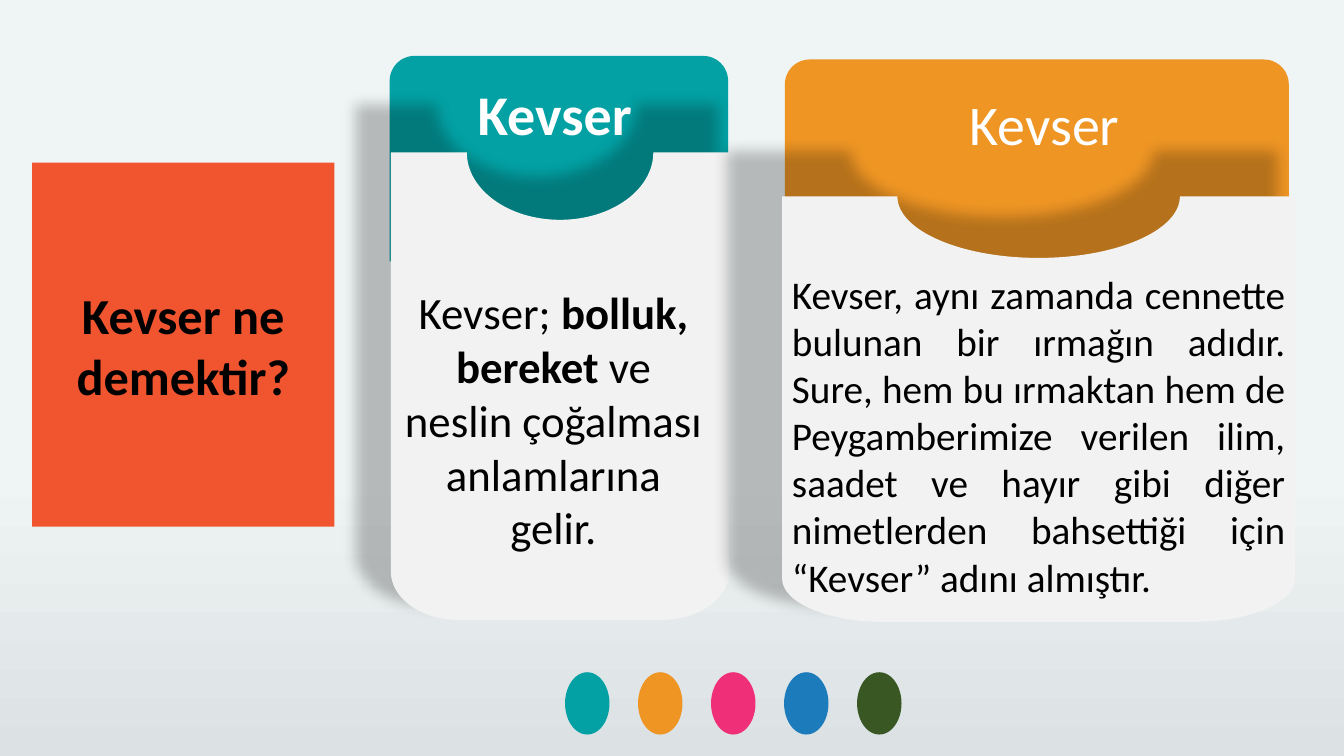
from dataclasses import dataclass
from math import atan2, degrees, hypot

from lxml.etree import SubElement
from pptx import Presentation
from pptx.dml.color import RGBColor
from pptx.enum.shapes import MSO_SHAPE as Shape
from pptx.enum.text import MSO_ANCHOR as Anchor, MSO_AUTO_SIZE as AutoSize, PP_ALIGN as Align
from pptx.oxml.ns import qn
from pptx.util import Cm, Pt


@dataclass(frozen=True)
class Theme:
    font: str = "Calibri"
    sky: str = "EFF4F5"
    mist: str = "DCE1E4"
    red: str = "F05530"
    teal: str = "03A1A4"
    orange: str = "EE9524"
    pink: str = "EF3078"
    blue: str = "1C7CBB"
    green: str = "385723"
    panel: str = "F2F2F2"
    ink: str = "000000"
    white: str = "FFFFFF"
    heading: int = 40
    question: int = 36
    meaning: int = 32
    detail: int = 28


THEME = Theme()
ROUNDNESS = 0.5523  # control-point reach of a quarter ellipse


def color(code):
    return RGBColor.from_string(code)


def paint(shape, fill):
    shape.fill.solid()
    shape.fill.fore_color.rgb = color(fill)
    shape.line.fill.background()


def write(box, runs, size, ink=THEME.ink, align=Align.CENTER, anchor=Anchor.TOP):
    """Fill a box with one paragraph; runs are (text, bold) pairs."""
    frame = box.text_frame
    frame.word_wrap = True
    frame.auto_size = AutoSize.NONE
    frame.vertical_anchor = anchor
    para = frame.paragraphs[0]
    para.alignment = align
    for text, bold in runs:
        span = para.add_run()
        span.text = text
        span.font.name = THEME.font
        span.font.size = Pt(size)
        span.font.bold = bold
        span.font.color.rgb = color(ink)


def add_text(page, place, runs, size, **style):
    box = page.shapes.add_textbox(*map(Cm, place))
    write(box, runs, size, **style)


def add_preset(page, kind, place, fill):
    shape = page.shapes.add_shape(kind, *map(Cm, place))
    shape.shadow.inherit = False
    paint(shape, fill)
    return shape


def add_backdrop(page):
    """A gradient rectangle behind everything else."""
    backdrop = add_preset(page, Shape.RECTANGLE, (0, 0, 33.87, 19.05), THEME.sky)
    backdrop.fill.gradient()
    backdrop.fill.gradient_angle = 270
    stops = zip(backdrop.fill.gradient_stops, (0.62, 1), (THEME.sky, THEME.mist))
    for stop, position, code in stops:
        stop.position = position
        stop.color.rgb = color(code)
    page.shapes._spTree.insert(2, backdrop._element)


def add_header(page, place, fill):
    header = add_preset(page, Shape.ROUND_2_SAME_RECTANGLE, place, fill)
    header.adjustments[0] = 0.121
    header.adjustments[1] = 0


def cast_shadow(shape, shift):
    effects = SubElement(shape._element.spPr, qn("a:effectLst"))
    shadow = SubElement(effects, qn("a:outerShdw"), {
        "blurRad": str(Pt(10)),
        "dist": str(Cm(hypot(*shift))),
        "dir": str(round(degrees(atan2(shift[1], shift[0])) % 360 * 60000)),
        "sx": "107000",
        "sy": "107000",
        "algn": "ctr",
        "rotWithShape": "0",
    })
    tint = SubElement(shadow, qn("a:srgbClr"), val=THEME.ink)
    SubElement(tint, qn("a:alpha"), val="23000")


def bend(shape, turns):
    """Turn numbered straight segments into quarter ellipses.

    A turn is True where the curve sets out vertically.
    """
    lines = list(shape._element.spPr.iter(qn("a:lnTo")))
    ends = [(int(line[0].get("x")), int(line[0].get("y"))) for line in lines]
    for index, vertical in turns.items():
        start, end = ends[index - 1], ends[index]
        corner = (start[0], end[1]) if vertical else (end[0], start[1])
        controls = [[round(p + ROUNDNESS * (c - p)) for p, c in zip(point, corner)]
                    for point in (start, end)]
        line = lines[index]
        line.tag = qn("a:cubicBezTo")
        line.remove(line[0])
        for x, y in (*controls, end):
            SubElement(line, qn("a:pt"), x=str(x), y=str(y))


def add_panel(page, place, notch, corner, shift):
    """A panel with a half-ellipse notch on top and rounded lower corners."""
    left, top, width, height = place
    right, bottom, middle = left + width, top + height, left + width / 2
    low = bottom - corner[1]
    points = [
        (left, top),
        (middle - notch[0], top), (middle, top + notch[1]), (middle + notch[0], top),
        (right, top), (right, low), (right - corner[0], bottom),
        (left + corner[0], bottom), (left, low),
    ]
    start, *others = [(Cm(x), Cm(y)) for x, y in points]
    builder = page.shapes.build_freeform(*start)
    builder.add_line_segments(others, close=True)
    panel = builder.convert_to_shape()
    bend(panel, {1: True, 2: False, 5: True, 7: False})
    paint(panel, THEME.panel)
    cast_shadow(panel, shift)


def add_question(page):
    title = page.shapes.title
    title.left, title.top, title.width, title.height = map(Cm, (0.81, 4.1, 7.62, 9.17))
    paint(title, THEME.red)
    write(title, [("Kevser ne demektir?", True)], THEME.question, anchor=Anchor.MIDDLE)


def add_dots(page):
    fills = (THEME.teal, THEME.orange, THEME.pink, THEME.blue, THEME.green)
    for index, fill in enumerate(fills):
        add_preset(page, Shape.OVAL, (14.24 + 1.84 * index, 16.94, 1.12, 1.57), fill)


def main():
    deck = Presentation()
    deck.slide_width, deck.slide_height = Cm(33.87), Cm(19.05)
    page = deck.slides.add_slide(deck.slide_layouts[5])

    add_backdrop(page)
    add_question(page)

    # Card headers
    add_header(page, (19.78, 1.5, 12.7, 5.18), THEME.orange)
    add_text(page, (19.53, 2.13, 13.59, 1.96), [("Kevser", False)],
             THEME.heading, ink=THEME.white)
    add_header(page, (9.82, 1.41, 8.53, 5.18), THEME.teal)
    add_text(page, (9.3, 1.88, 9.68, 1.96), [("Kevser ", True)],
             THEME.heading, ink=THEME.white)

    add_dots(page)

    # Card panels, whose shadows fall on the headers
    add_panel(page, (9.85, 3.84, 8.53, 11.78), notch=(2.35, 1.7),
              corner=(1.69, 1.22), shift=(-0.59, -0.8))
    add_panel(page, (19.71, 4.95, 12.93, 10.72), notch=(3.56, 1.55),
              corner=(2.54, 1.09), shift=(-0.93, -0.75))

    # Card texts
    add_text(page, (19.71, 6.69, 12.93, 8.64), [
        ("Kevser, aynı zamanda cennette bulunan bir ırmağın adıdır. Sure, hem bu "
         "ırmaktan hem de Peygamberimize verilen ilim, saadet ve hayır gibi diğer "
         "nimetlerden bahsettiği için “Kevser” adını almıştır.", False),
    ], THEME.detail, align=Align.JUSTIFY)
    add_text(page, (9.82, 7.06, 8.26, 7.09), [
        ("Kevser; ", False),
        ("bolluk, bereket ", True),
        ("ve neslin çoğalması anlamlarına gelir.", False),
    ], THEME.meaning)

    deck.save("out.pptx")


if __name__ == "__main__":
    main()
